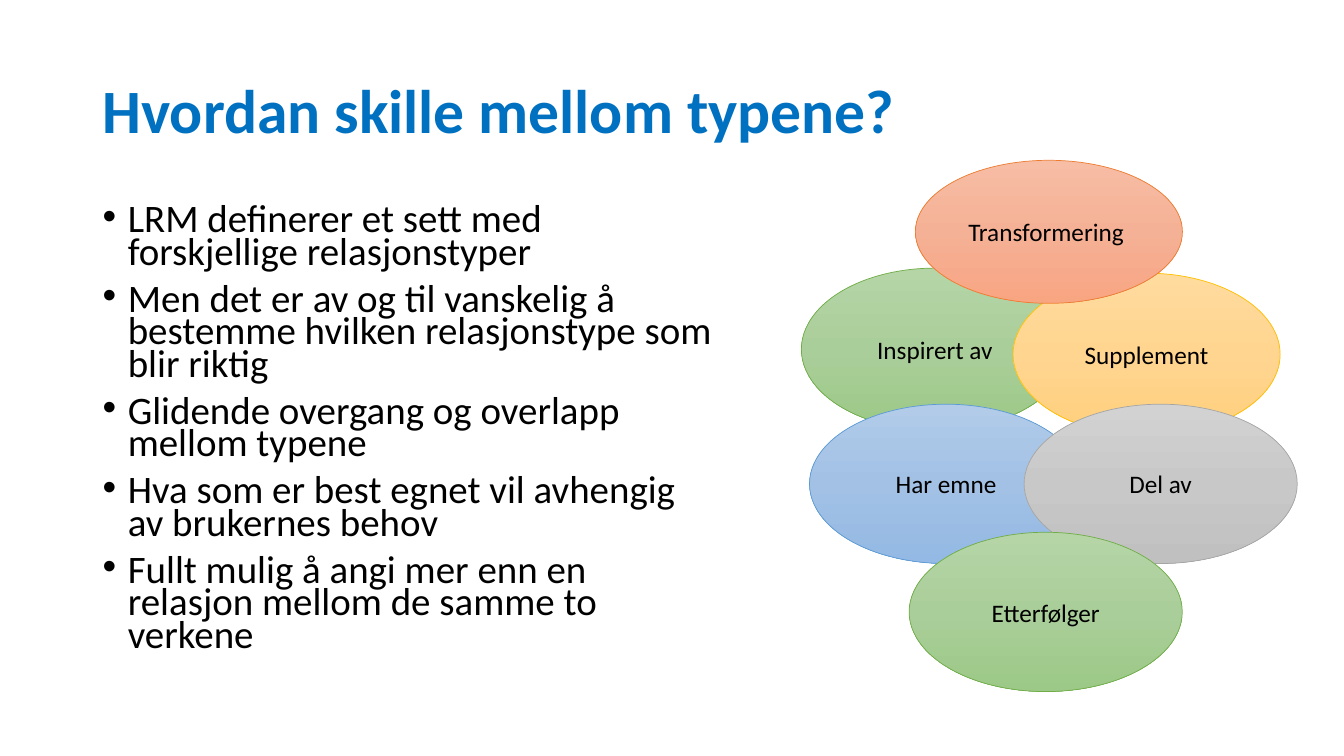
from copy import deepcopy

from pptx import Presentation
from pptx.dml.color import RGBColor
from pptx.enum import shapes, text
from pptx.oxml import ns, xmlchemy
from pptx.util import Pt

BLACK = RGBColor(0x00, 0x00, 0x00)
TITLE_BLUE = RGBColor(0x00, 0x70, 0xC0)
GREEN = (RGBColor(0x70, 0xAD, 0x47), RGBColor(0xB5, 0xD5, 0xA7),
         RGBColor(0xAA, 0xCE, 0x9A), RGBColor(0x9C, 0xC9, 0x87))
YELLOW = (RGBColor(0xFF, 0xC0, 0x00), RGBColor(0xFF, 0xDB, 0x9E),
          RGBColor(0xFF, 0xD5, 0x90), RGBColor(0xFF, 0xD0, 0x7C))
BLUE = (RGBColor(0x5B, 0x9B, 0xD5), RGBColor(0xB1, 0xCB, 0xE9),
        RGBColor(0xA3, 0xC1, 0xE5), RGBColor(0x93, 0xB9, 0xE4))
ORANGE = (RGBColor(0xED, 0x7D, 0x31), RGBColor(0xF7, 0xBD, 0xA5),
          RGBColor(0xF5, 0xB1, 0x96), RGBColor(0xF8, 0xA5, 0x82))
GREY = (RGBColor(0xA5, 0xA5, 0xA5), RGBColor(0xD2, 0xD2, 0xD2),
        RGBColor(0xC8, 0xC8, 0xC8), RGBColor(0xC0, 0xC0, 0xC0))

ADVICE = (
    "LRM definerer et sett med forskjellige relasjonstyper",
    "Men det er av og til vanskelig å bestemme hvilken relasjonstype som blir riktig",
    "Glidende overgang og overlapp mellom typene",
    "Hva som er best egnet vil avhengig av brukernes behov",
    "Fullt mulig å angi mer enn en relasjon mellom de samme to verkene",
)
WIDE, LARGE = 190.8, 195.1
RELATIONS = (
    ("Inspirert av", 572.4, 191.5, WIDE, 115.9, GREEN),
    ("Supplement", 723.6, 195.1, WIDE, 115.9, YELLOW),
    ("Har emne", 578.2, 288.7, LARGE, 113.8, BLUE),
    ("Transformering ", 653.8, 114.5, WIDE, 102.2, ORANGE),
    ("Del av", 731.5, 288.7, LARGE, 113.8, GREY),
    ("Etterfølger", 649.4, 380.2, LARGE, 113.8, GREEN),
)


class RelationSlide:
    font = "Calibri"

    def __init__(self, slide):
        self.shapes = slide.shapes

    def run(self, paragraph, words, size, color=BLACK, bold=False):
        run = paragraph.add_run()
        run.text = words
        run.font.name = self.font
        run.font.size = Pt(size)
        run.font.bold = bold
        run.font.color.rgb = color

    def frame(self, left, top, width, height):
        box = self.shapes.add_textbox(Pt(left), Pt(top), Pt(width), Pt(height))
        box.text_frame.word_wrap = True
        return box.text_frame

    def title(self, words, *place):
        heading = self.frame(*place)
        heading.vertical_anchor = text.MSO_ANCHOR.MIDDLE
        heading.paragraphs[0].line_spacing = 0.9
        self.run(heading.paragraphs[0], words, 44, TITLE_BLUE, True)

    def bullets(self, items, *place):
        body = self.frame(*place)
        for index, item in enumerate(items):
            point = body.add_paragraph() if index else body.paragraphs[0]
            point.line_spacing = 0.7
            point.space_before = Pt(10)
            properties = point._p.get_or_add_pPr()
            properties.set("marL", str(Pt(18)))
            properties.set("indent", str(Pt(-18)))
            for tag, key, value in (("a:buFont", "typeface", "Arial"), ("a:buChar", "char", "•")):
                bullet = xmlchemy.OxmlElement(tag)
                bullet.set(key, value)
                properties.append(bullet)
            self.run(point, item, 27.8)

    def ellipse(self, label, left, top, width, height, colors):
        oval = self.shapes.add_shape(
            shapes.MSO_SHAPE.OVAL, Pt(left), Pt(top), Pt(width), Pt(height))
        oval.shadow.inherit = False
        outline, *shades = colors
        oval.line.color.rgb = outline
        oval.line.width = Pt(0.5)
        oval.fill.gradient()
        oval.fill.gradient_angle = 270
        stops = oval._element.spPr.find(ns.qn("a:gradFill")).find(ns.qn("a:gsLst"))
        stops.insert(1, deepcopy(stops[0]))
        for index, (stop, shade) in enumerate(zip(oval.fill.gradient_stops, shades)):
            stop.position = index / 2
            stop.color.rgb = shade
        oval.text_frame.vertical_anchor = text.MSO_ANCHOR.MIDDLE
        caption = oval.text_frame.paragraphs[0]
        caption.alignment = text.PP_ALIGN.CENTER
        self.run(caption, label, 18)


def main():
    deck = Presentation()
    deck.slide_width, deck.slide_height = Pt(960), Pt(540)
    page = RelationSlide(deck.slides.add_slide(deck.slide_layouts[6]))
    page.title("Hvordan skille mellom typene?", 66.2, 28.8, 828, 104.4)
    page.bullets(ADVICE, 66.2, 144, 455, 342.7)
    for relation in RELATIONS:
        page.ellipse(*relation)
    deck.save("out.pptx")


if __name__ == "__main__":
    main()
